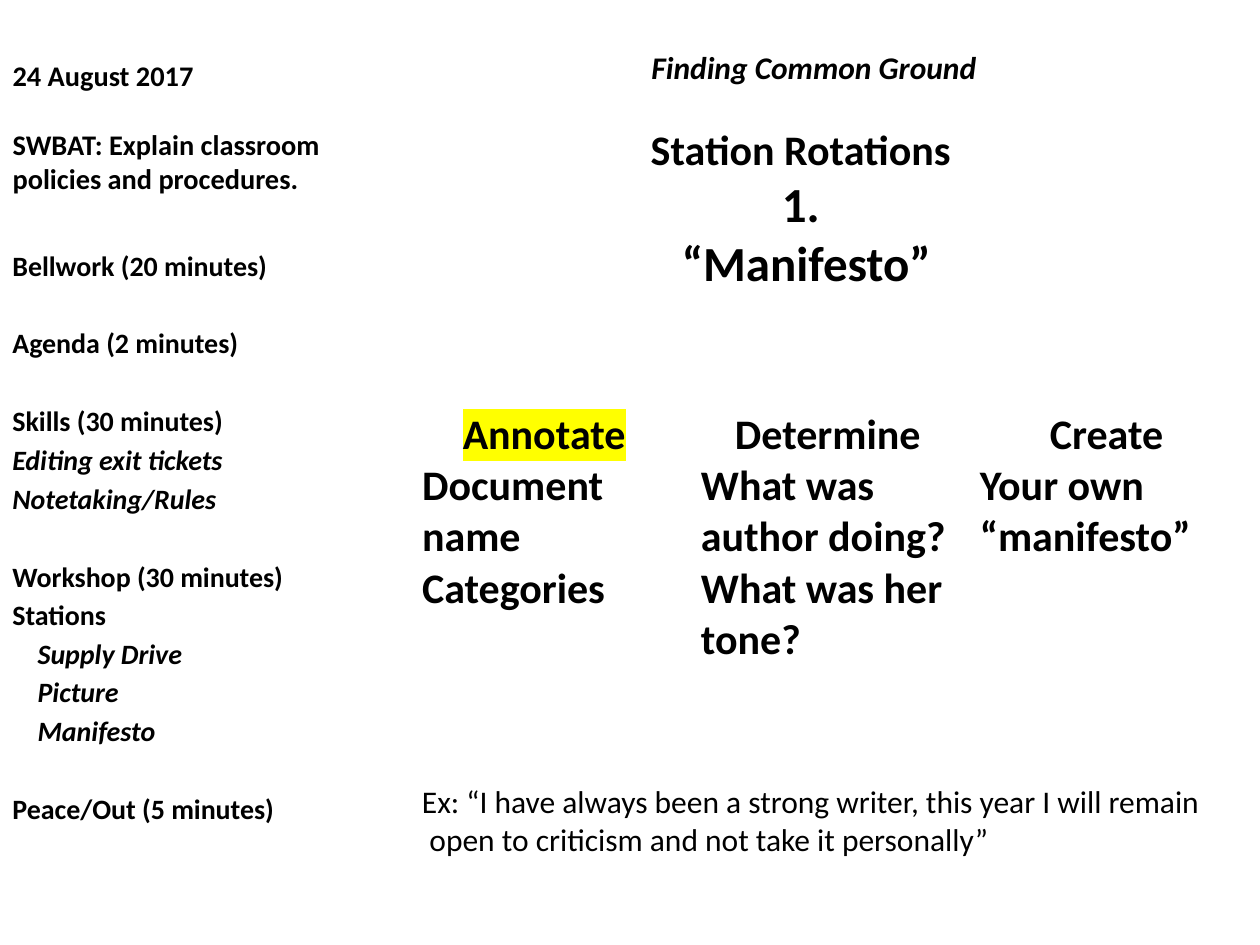
from lxml import etree
from pptx import Presentation
from pptx.dml.color import RGBColor
from pptx.enum import shapes, text
from pptx.oxml.ns import qn
from pptx.util import Inches, Pt

BLACK = RGBColor(0, 0, 0)
WHITE = RGBColor(255, 255, 255)
YELLOW = RGBColor(255, 255, 0)
FONT = "Calibri"
LEFT, CENTER = text.PP_ALIGN.LEFT, text.PP_ALIGN.CENTER

AGENDA = [  # sections of (text, italic, indent in inches)
    [("Bellwork (20 minutes)", False, 0)],
    [("Agenda (2 minutes)", False, 0)],
    [("Skills (30 minutes)", False, 0),
     ("Editing exit tickets", True, 0),
     ("Notetaking/Rules", True, 0)],
    [("Workshop (30 minutes)", False, 0),
     ("Stations", False, 0),
     ("Supply Drive", True, 0.2),
     ("Picture", True, 0.2),
     ("Manifesto", True, 0.2)],
    [("Peace/Out (5 minutes)", False, 0)],
]
STATIONS = [
    ("Annotate", ["Document name", "Categories"]),
    ("Determine", ["What was author doing? What was her tone?"]),
    ("Create", ["Your own “manifesto”"]),
]


def add_run(paragraph, words, size, **formats):
    run = paragraph.add_run()
    run.text = words
    values = {"name": FONT, "size": Pt(size), "bold": True, "italic": False}
    for name, value in (values | formats).items():
        setattr(run.font, name, value)
    run.font.color.rgb = BLACK
    return run


def add_line(frame, words, size, align=LEFT, before=0, **formats):
    """Write one paragraph, using the empty first one if it is free."""
    paragraph = frame.paragraphs[0]
    if paragraph.runs:
        paragraph = frame.add_paragraph()
    paragraph.alignment = align
    paragraph.space_before = Pt(before)
    return paragraph, add_run(paragraph, words, size, **formats)


def set_indent(paragraph, margin, first=0):
    properties = paragraph._p.get_or_add_pPr()
    properties.set("marL", str(Inches(margin)))
    properties.set("indent", str(Inches(first)))


def add_text_box(slide, box):
    shape = slide.shapes.add_textbox(*map(Inches, box))
    shape.text_frame.word_wrap = True
    return shape


def place_title(slide, box):
    title = slide.shapes.title
    title.left, title.top, title.width, title.height = map(Inches, box)
    frame = title.text_frame
    frame.auto_size = text.MSO_AUTO_SIZE.NONE
    frame.vertical_anchor = text.MSO_ANCHOR.BOTTOM
    frame.margin_bottom = Inches(0.32)
    add_line(frame, "24 August 2017", 16.2)
    add_line(frame, "SWBAT: Explain classroom policies and procedures.", 16.2, before=20)


def add_lesson_panel(slide, box):
    panel = add_text_box(slide, box)
    panel.fill.solid()
    panel.fill.fore_color.rgb = WHITE
    frame = panel.text_frame
    add_line(frame, "Finding Common Ground", 18, CENTER, italic=True)
    example, _ = add_line(
        frame,
        "Ex: “I have always been a strong writer, this year I will remain "
        "open to criticism and not take it personally”",
        18, before=398, bold=False)
    set_indent(example, 0.06, -0.06)


def add_agenda(slide, box):
    frame = add_text_box(slide, box).text_frame
    for section in AGENDA:
        for index, (words, italic, indent) in enumerate(section):
            before = 2.9 if index else 25.3
            if section is AGENDA[0]:
                before = 0
            paragraph, _ = add_line(frame, words, 16, before=before, italic=italic)
            set_indent(paragraph, indent)


def add_station_heading(slide, box):
    heading = slide.shapes.add_shape(shapes.MSO_SHAPE.RECTANGLE, *map(Inches, box))
    heading.shadow.inherit = False
    heading.fill.background()
    heading.line.color.rgb = WHITE
    heading.line.width = Pt(0.25)
    frame = heading.text_frame
    frame.word_wrap = True
    frame.vertical_anchor = text.MSO_ANCHOR.TOP
    for words, size in (("Station Rotations", 24), ("1.", 28), (" “Manifesto”", 28)):
        add_line(frame, words, size, CENTER)


def add_solid_color(parent, color):
    fill = etree.SubElement(parent, qn("a:solidFill"))
    etree.SubElement(fill, qn("a:srgbClr"), val=str(color))


def set_borders(cell):
    properties = cell._tc.get_or_add_tcPr()
    for index, (side, width) in enumerate((("L", 1), ("R", 1), ("T", 1), ("B", 3))):
        border = etree.Element(qn(f"a:ln{side}"), w=str(Pt(width)))
        add_solid_color(border, WHITE)
        properties.insert(index, border)


def highlight(run, color):
    mark = etree.Element(qn("a:highlight"))
    etree.SubElement(mark, qn("a:srgbClr"), val=str(color))
    run.font._element.find(qn("a:solidFill")).addnext(mark)


def add_station_table(slide, box):
    table = slide.shapes.add_table(1, len(STATIONS), *map(Inches, box)).table
    table.first_row = table.horz_banding = False
    for cell, (name, tasks) in zip(table.rows[0].cells, STATIONS):
        cell.fill.background()
        set_borders(cell)
        paragraph, run = add_line(cell.text_frame, name, 24, CENTER)
        if name == "Annotate":
            highlight(run, YELLOW)
            add_run(paragraph, " ", 24)
        for task in tasks:
            add_line(cell.text_frame, task, 24)


def main():
    presentation = Presentation()
    presentation.slide_width, presentation.slide_height = Inches(10), Inches(7.5)
    slide = presentation.slides.add_slide(presentation.slide_layouts[5])
    # Left column: date, objective and agenda
    place_title(slide, (0, 0, 2.83, 1.87))
    add_agenda(slide, (0, 1.92, 2.75, 5.42))
    # Right side: lesson, station heading and station tasks
    add_lesson_panel(slide, (3.25, 0.33, 6.42, 7.17))
    add_station_heading(slide, (3.27, 0.93, 6.17, 1.75))
    add_station_table(slide, (3.25, 3.2, 6.64, 2.1))
    presentation.save("out.pptx")


if __name__ == "__main__":
    main()
